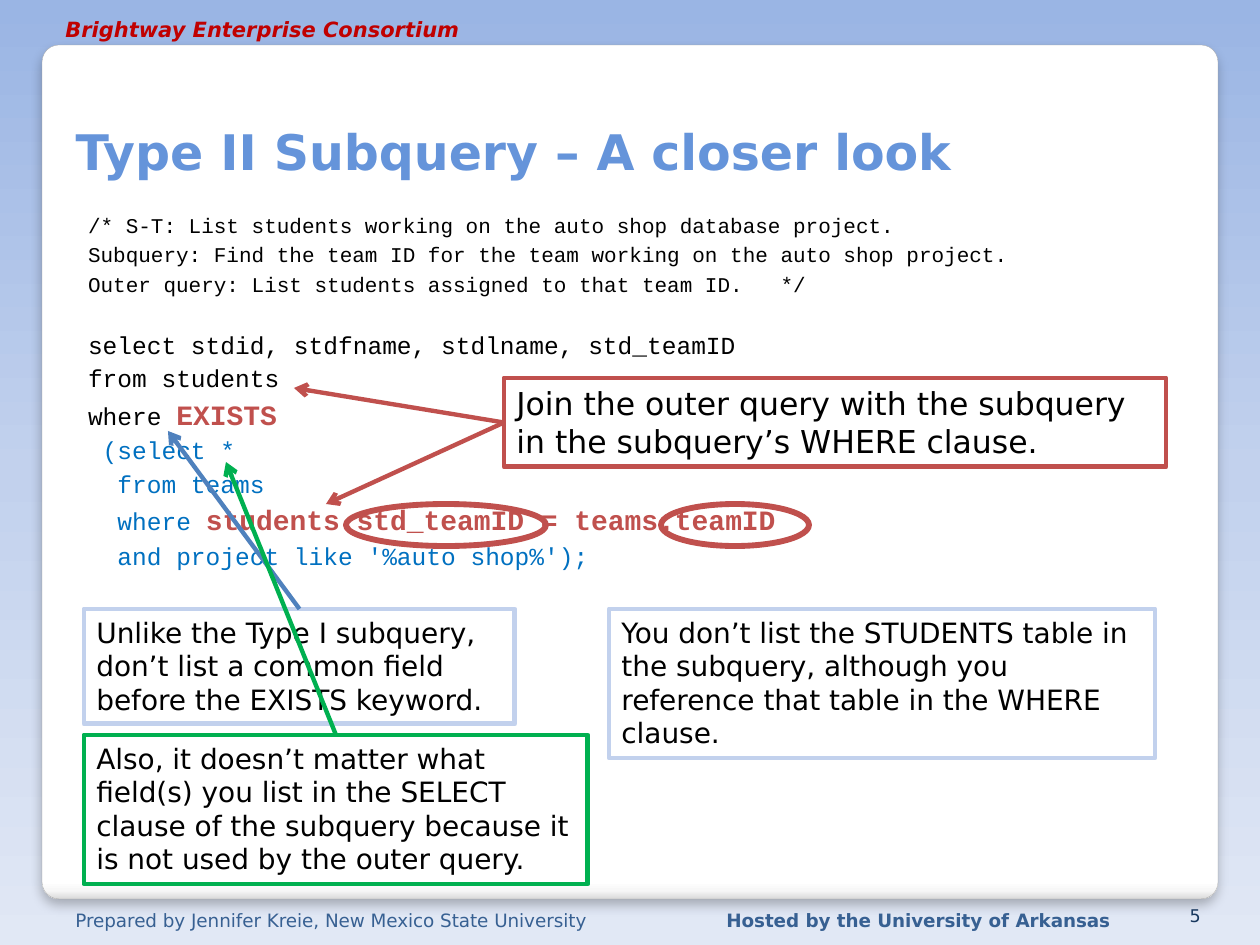
from dataclasses import dataclass
from lxml.etree import SubElement as Sub
from pptx import Presentation
from pptx.dml.color import RGBColor as RGB
from pptx.enum.shapes import MSO_CONNECTOR as Conn, MSO_SHAPE as Kind
from pptx.enum.text import MSO_ANCHOR as Anchor, MSO_AUTO_SIZE as Fit, PP_ALIGN as Align
from pptx.oxml.ns import qn
from pptx.util import Emu, Pt


@dataclass(frozen=True)
class Theme:
    sans: str = "DejaVu Sans"
    mono: str = "Courier New"
    black: str = "000000"
    title: str = "6594DA"
    foot: str = "376092"
    page: str = "17375E"
    head: str = "C00000"
    red: str = "C0504D"
    code: str = "0070C0"
    pale: str = "C2D1ED"
    blue: str = "4F81BD"
    green: str = "00B050"
    edge: str = "A4A4A4"
    sky: tuple = ((0, "9AB5E4"), (50, "C2D1ED"), (100, "E1E8F5"))
    card: tuple = ((0, "FFFFFF"), (98, "FFFFFF"), (99, "F7F7F7"), (100, "DADADA"))
    big: float = 28
    call: float = 18
    note: float = 16
    key: float = 16
    query: float = 14
    small: float = 12
    fine: float = 10.5
    num: float = 10
    gap: float = 2.5


def px(n):
    return Emu(round(n * 914400 / 126))


class Deck:
    def __init__(self, theme):
        self.theme = theme
        self.prs = Presentation()
        self.prs.slide_width, self.prs.slide_height = px(1260), px(945)
        self.slide = self.prs.slides.add_slide(self.prs.slide_layouts[1])
        self.shapes = self.slide.shapes

    def place(self, item, box):
        item.left, item.top, item.width, item.height = map(px, box)

    def run(self, para, text, size, color, bold=False, italic=False, face=None):
        run = para.add_run()
        run.text = text
        font = run.font
        font.name, font.size = face or self.theme.sans, Pt(size)
        font.bold, font.italic = bold, italic
        font.color.rgb = RGB.from_string(color)

    def blend(self, fill, root, stops):
        fill.gradient()
        fill.gradient_angle = 270
        group = root.find(".//" + qn("a:gsLst"))
        for old in list(group):
            group.remove(old)
        for pos, color in stops:
            stop = Sub(group, qn("a:gs"), pos=str(pos * 1000))
            Sub(stop, qn("a:srgbClr"), val=color)

    def back(self):
        self.blend(self.slide.background.fill, self.slide.element, self.theme.sky)

    def card(self, box):
        card = self.shapes.add_shape(Kind.ROUNDED_RECTANGLE, *map(px, box))
        card.adjustments[0] = 0.02
        self.blend(card.fill, card.element, self.theme.card)
        self.stroke(card, self.theme.edge, 0.16)
        card.shadow.inherit = False
        glow = card.element.spPr.find(qn("a:effectLst"))
        shade = Sub(glow, qn("a:outerShdw"), blurRad=str(Pt(6)), dist=str(Pt(4)),
                    dir="5400000", algn="t", rotWithShape="0")
        tint = Sub(shade, qn("a:srgbClr"), val=self.theme.black)
        Sub(tint, qn("a:alpha"), val="25000")
        self.shapes._spTree.insert(2, card.element)

    def stroke(self, item, color, width):
        item.line.color.rgb = RGB.from_string(color)
        item.line.width = Pt(width)

    def title(self, box, text):
        item = self.shapes.title
        self.place(item, box)
        frame = item.text_frame
        frame.auto_size, frame.vertical_anchor = Fit.NONE, Anchor.BOTTOM
        para = frame.paragraphs[0]
        para.alignment = Align.LEFT
        self.run(para, text, self.theme.big, self.theme.title, bold=True)

    def body(self, box, rows):
        item = self.slide.placeholders[1]
        self.place(item, box)
        frame = item.text_frame
        frame.auto_size, frame.vertical_anchor = Fit.NONE, Anchor.TOP
        frame.margin_left, frame.margin_top = px(25), px(13)
        for i, (lead, runs) in enumerate(rows):
            para = frame.paragraphs[0] if i == 0 else frame.add_paragraph()
            para.space_before = Pt(self.theme.gap + lead)
            prop = para._p.get_or_add_pPr()
            prop.set("marL", "0")
            prop.set("indent", "0")
            Sub(prop, qn("a:buNone"))
            for text, size, color, bold in runs:
                self.run(para, text, size, color, bold, face=self.theme.mono)

    def text(self, box, text, size, color, bold=False, italic=False,
             align=Align.LEFT, anchor=Anchor.TOP):
        item = self.shapes.add_textbox(*map(px, box))
        frame = item.text_frame
        frame.word_wrap, frame.vertical_anchor = True, anchor
        para = frame.paragraphs[0]
        para.alignment = align
        self.run(para, text, size, color, bold, italic)
        return item

    def note(self, box, text, size, color):
        item = self.text(box, text, size, self.theme.black)
        item.text_frame.auto_size = Fit.SHAPE_TO_FIT_TEXT
        self.stroke(item, color, 2.75)
        return item

    def ring(self, box):
        ring = self.shapes.add_shape(Kind.OVAL, *map(px, box))
        ring.fill.background()
        ring.shadow.inherit = False
        self.stroke(ring, self.theme.red, 3.35)

    def arrow(self, item, side, end, color):
        x, y = map(px, end)
        line = self.shapes.add_connector(Conn.STRAIGHT, item.left, item.top, x, y)
        line.begin_connect(item, side)
        self.stroke(line, color, 2.5)
        Sub(line.line._get_or_add_ln(), qn("a:tailEnd"), type="arrow")
        Sub(line.element.spPr, qn("a:effectLst"))

    def save(self):
        self.prs.save("out.pptx")


def main():
    t = Theme()
    d = Deck(t)

    def rem(text):
        return text, t.small, t.black, False

    def out(text):
        return text, t.query, t.black, False

    def sub(text):
        return text, t.query, t.code, False

    def key(text):
        return text, t.key, t.red, True

    d.back()
    d.card((42, 45, 1176, 854))
    d.text((63, 903, 562, 29), "Prepared by Jennifer Kreie, New Mexico State University",
           t.fine, t.foot)
    d.text((714, 903, 420, 29), "Hosted by the University of Arkansas",
           t.fine, t.foot, bold=True)
    d.text((53, 10, 420, 29), "Brightway Enterprise Consortium",
           t.small, t.head, bold=True, italic=True)
    d.title((63, 42, 1128, 145), "Type II Subquery – A closer look")
    d.body((63, 199, 1128, 630), [
        (0, [rem("/* S-T: List students working on the auto shop database project.")]),
        (0, [rem("Subquery: Find the team ID for the team working on the auto shop project.")]),
        (0, [rem("Outer query: List students assigned to that team ID.   */")]),
        (16.5, [out("select stdid, stdfname, stdlname, std_teamID")]),
        (0, [out("from students")]),
        (0, [out("where "), key("EXISTS")]),
        (0, [sub(" (select *")]),
        (0, [sub("  from teams")]),
        (0, [sub("  where "), key("students.std_teamID = teams.teamID")]),
        (0, [sub("  and project like '%auto shop%');")]),
    ])
    d.text((1150, 903, 63, 29), "5", t.num, t.page, align=Align.RIGHT, anchor=Anchor.BOTTOM)

    join = d.note((504, 378, 662, 89), "Join the outer query with the subquery "
                  "in the subquery’s WHERE clause.", t.call, t.red)
    for end in ((294, 388), (326, 504)):
        d.arrow(join, 1, end, t.red)
    d.note((609, 609, 546, 149), "You don’t list the STUDENTS table in the subquery, although "
           "you reference that table in the WHERE clause.", t.note, t.pale)
    for left, width in ((346, 200), (661, 148)):
        d.ring((left, 504, width, 42))
    unlike = d.note((84, 609, 431, 115), "Unlike the Type I subquery, don’t list a common "
                    "field before the EXISTS keyword.", t.note, t.pale)
    d.arrow(unlike, 0, (168, 431), t.blue)
    also = d.note((84, 735, 504, 149), "Also, it doesn’t matter what field(s) you list in the "
                  "SELECT clause of the subquery because it is not used by the outer query.",
                  t.note, t.green)
    d.arrow(also, 0, (226, 462), t.green)
    d.save()


if __name__ == "__main__":
    main()
